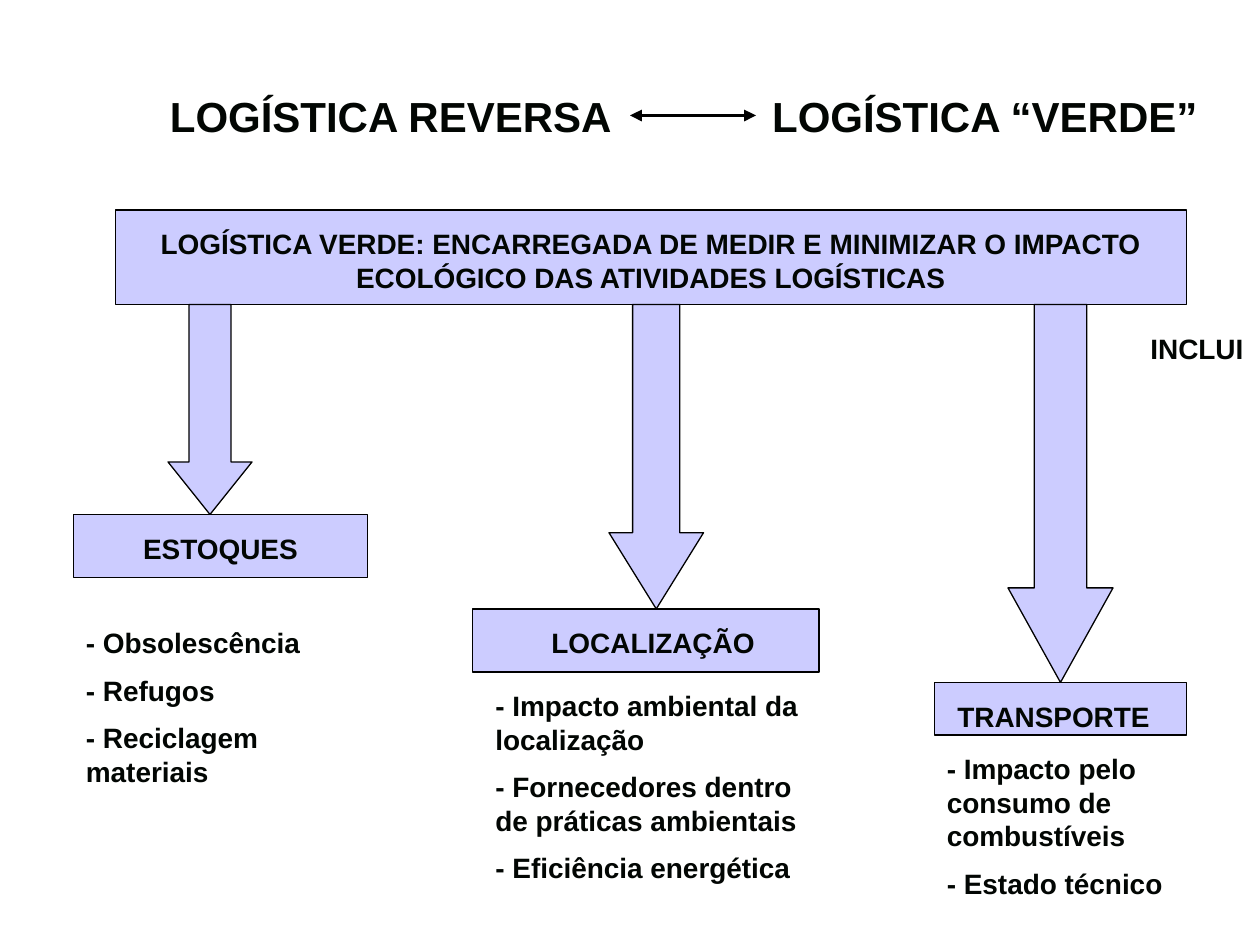
from lxml.etree import SubElement
from pptx import Presentation
from pptx.dml.color import RGBColor
from pptx.enum.shapes import MSO_CONNECTOR, MSO_SHAPE
from pptx.enum.text import MSO_ANCHOR, MSO_AUTO_SIZE, PP_ALIGN
from pptx.oxml.ns import qn
from pptx.util import Inches, Pt

COLUMNS, ROWS = 120, 90
CELL = Inches(10) // COLUMNS
INK, LILAC, BLACK = "020603", "CCCCFF", "000000"

BRANCHES = [
    {"label": "ESTOQUES", "box": (7, 49, 28, 6), "caption": (8, 50, 26, 4.4),
     "arrow": (16, 8), "head": 0.625, "list": (7, 59, 28, 17.3),
     "items": ["- Obsolescência", "- Refugos", "- Reciclagem materiais"]},
    {"label": "LOCALIZAÇÃO", "box": (45, 58, 33, 6), "caption": (47.4, 59, 29.6, 4.4),
     "arrow": (58, 9), "head": 0.806, "list": (46, 65, 34, 25.3),
     "items": ["- Impacto ambiental da localização",
               "- Fornecedores dentro de práticas ambientais",
               "- Eficiência energética"]},
    {"label": "TRANSPORTE", "box": (89, 65, 24, 5), "caption": (90, 66, 30, 4.4),
     "align": PP_ALIGN.LEFT,
     "arrow": (96, 10), "head": 0.9, "list": (89, 71, 31, 15.6),
     "items": ["- Impacto pelo consumo de combustíveis", "- Estado técnico"]},
]


def color(value):
    """Turn a hex string into a colour."""
    return RGBColor.from_string(value)


def place(area):
    """Convert grid columns and rows into slide lengths."""
    return [round(cells * CELL) for cells in area]


def add_text(page, area, lines, size=16, align=PP_ALIGN.LEFT, tab=None):
    """Write bold paragraphs in a wrapping text box, with an optional tab stop."""
    box = page.shapes.add_textbox(*place(area))
    frame = box.text_frame
    frame.word_wrap = True
    frame.auto_size = MSO_AUTO_SIZE.SHAPE_TO_FIT_TEXT
    frame.vertical_anchor = MSO_ANCHOR.TOP
    for index, line in enumerate(lines):
        para = frame.add_paragraph() if index else frame.paragraphs[0]
        para.alignment = align
        if index:
            para.space_before = Pt(size / 2)
        if tab:
            stops = SubElement(para._p.get_or_add_pPr(), qn("a:tabLst"))
            SubElement(stops, qn("a:tab"), pos=str(Inches(tab)), algn="l")
        span = para.add_run()
        span.text = line
        span.font.name = "Arial"
        span.font.size = Pt(size)
        span.font.bold = True
        span.font.color.rgb = color(INK)
    return box


def add_block(page, kind, area):
    """Draw a lilac preset shape with a thin black outline."""
    block = page.shapes.add_shape(kind, *place(area))
    block.shadow.inherit = False
    block.fill.solid()
    block.fill.fore_color.rgb = color(LILAC)
    block.line.color.rgb = color(BLACK)
    block.line.width = Pt(0.75)
    return block


def add_heading(page, area):
    """Write the two linked terms and the double arrow between them."""
    left, top, width, height = area
    add_text(page, area, ["LOGÍSTICA REVERSA\tLOGÍSTICA “VERDE”"], size=24, tab=4.78)
    middle = top + height / 2
    link = page.shapes.add_connector(
        MSO_CONNECTOR.STRAIGHT, *place((left + 45, middle, left + 57, middle)))
    link.line.color.rgb = color(BLACK)
    link.line.width = Pt(2.25)
    outline = link.line._get_or_add_ln()
    for end in ("a:headEnd", "a:tailEnd"):
        SubElement(outline, qn(end), type="triangle")
    SubElement(link._element.spPr, qn("a:effectLst"))


def add_definition(page, area):
    """Draw the definition banner and the note beside its arrows."""
    left, top, width, height = area
    add_block(page, MSO_SHAPE.RECTANGLE, area)
    add_text(page, (left + 3, top + 1, width - 6, 7.7),
             ["LOGÍSTICA VERDE: ENCARREGADA DE MEDIR E MINIMIZAR O IMPACTO "
              "ECOLÓGICO DAS ATIVIDADES LOGÍSTICAS"], align=PP_ALIGN.CENTER)
    add_text(page, (left + 94, top + height + 2, 18, 4.4), ["INCLUI"],
             align=PP_ALIGN.CENTER)


def add_branch(page, branch, start):
    """Draw an arrow from the start row to a labelled box with its list."""
    left, width = branch["arrow"]
    arrow = add_block(page, MSO_SHAPE.DOWN_ARROW,
                      (left, start, width, branch["box"][1] - start))
    arrow.adjustments[0] = 0.5
    arrow.adjustments[1] = branch["head"]
    add_block(page, MSO_SHAPE.RECTANGLE, branch["box"])
    add_text(page, branch["caption"], [branch["label"]],
             align=branch.get("align", PP_ALIGN.CENTER))
    add_text(page, branch["list"], branch["items"])


def main():
    """Build the slide and save the deck."""
    deck = Presentation()
    deck.slide_width, deck.slide_height = COLUMNS * CELL, ROWS * CELL
    page = deck.slides.add_slide(deck.slide_layouts[6])
    banner = (11, 20, 102, 9)
    add_heading(page, (15, 8, 105, 6))
    add_definition(page, banner)
    for branch in BRANCHES:
        add_branch(page, branch, banner[1] + banner[3])
    deck.save("out.pptx")


if __name__ == "__main__":
    main()
